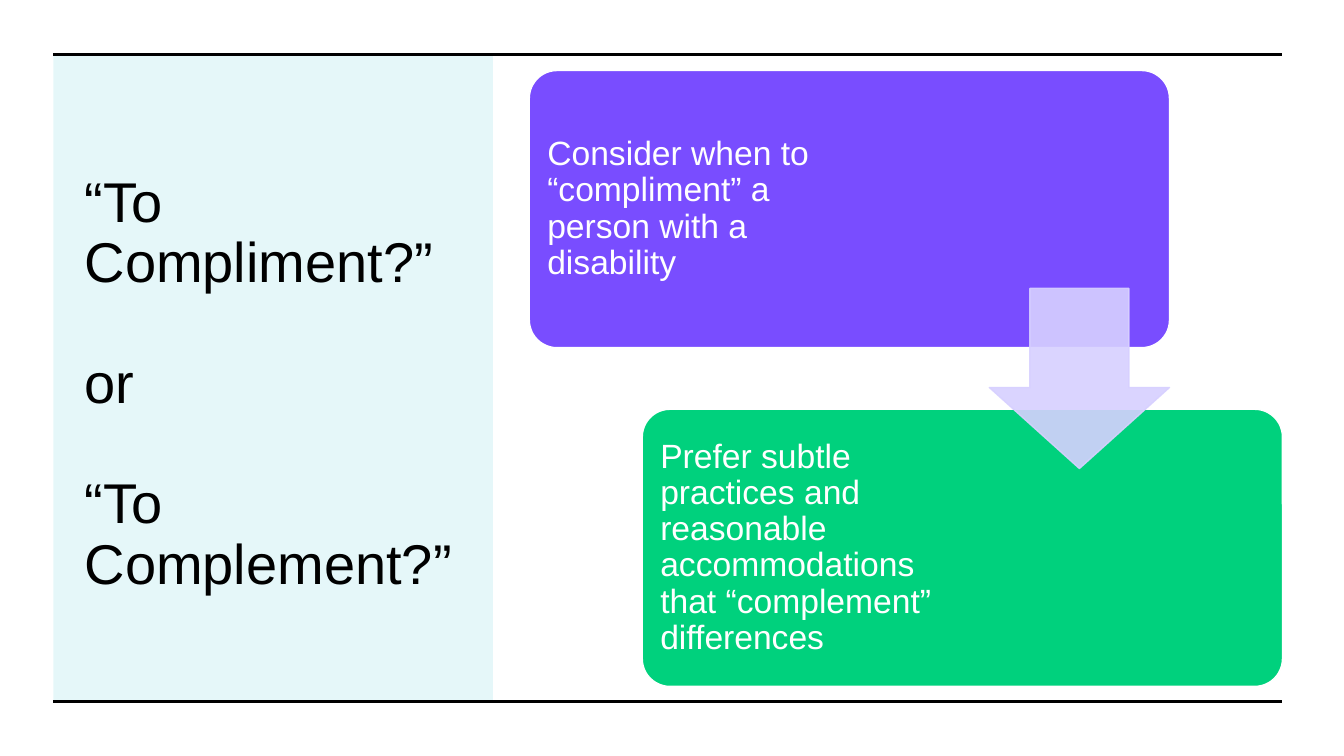
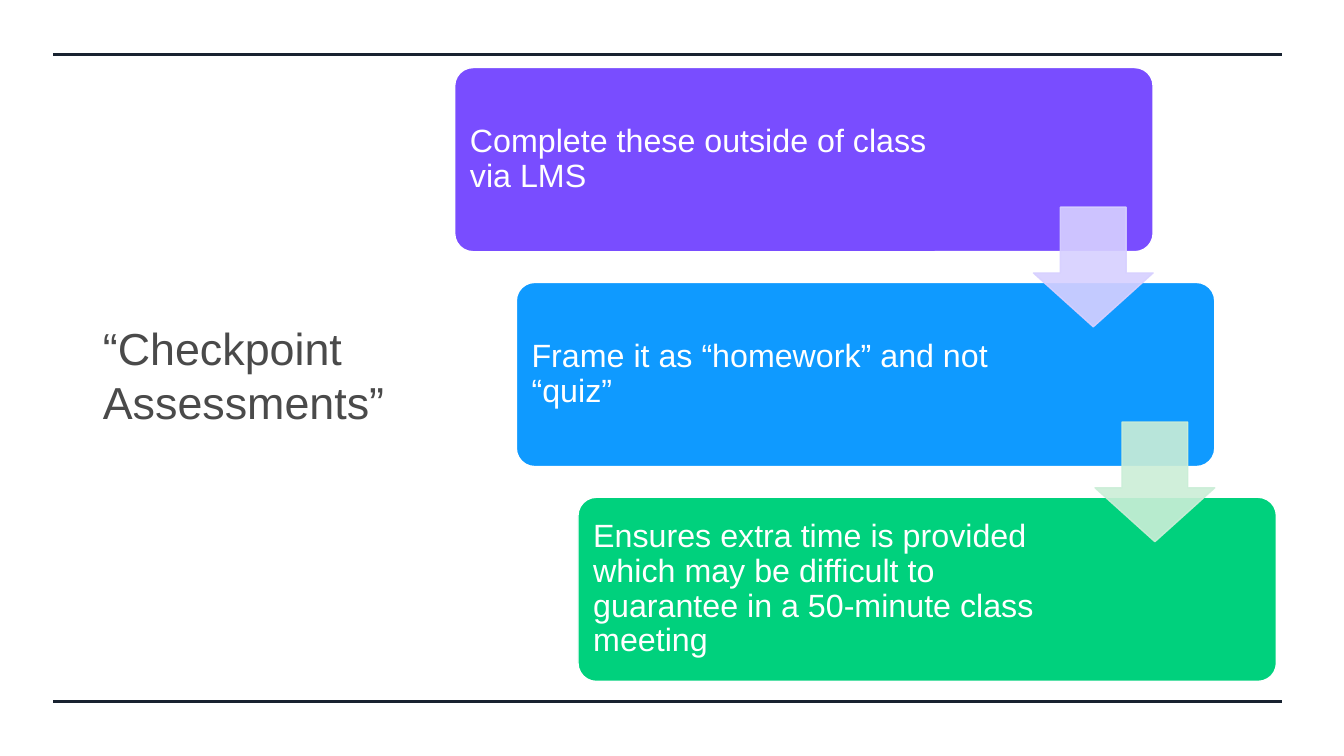
from lxml import etree
from pptx import Presentation, util as u
from pptx.dml.color import RGBColor
from pptx.enum import shapes, text
from pptx.oxml import ns

# Shared style
FONT = "Arial"
WHITE = RGBColor(0xFF, 0xFF, 0xFF)
BLACK = RGBColor(0x00, 0x00, 0x00)
NAVY = RGBColor(0x18, 0x22, 0x30)
GREY = RGBColor(0x4A, 0x4A, 0x4A)
TEAL = RGBColor(0x00, 0xBA, 0xC8)
PURPLE = RGBColor(0x79, 0x4D, 0xFF)
BLUE = RGBColor(0x0F, 0x9A, 0xFF)
GREEN = RGBColor(0x00, 0xD1, 0x7D)
LILAC = RGBColor(0xD7, 0xD0, 0xFF)
MINT = RGBColor(0xCB, 0xEE, 0xD7)

# Page frame, in inches
WIDTH, HEIGHT = 13.33, 7.5
LEFT, RIGHT = 0.53, 12.72
TOP, BOTTOM = 0.54, 6.96

# Cascade proportions, as shares of its area
CARD_WIDTH = 0.85
CARDS_HEIGHT = 0.9
ARROW_SIZE = 0.65  # share of card height


def inches(*lengths):
    return [u.Inches(length) for length in lengths]


def format_text(frame, size, color, spacing):
    frame.word_wrap = True
    frame.auto_size = text.MSO_AUTO_SIZE.NONE
    frame.vertical_anchor = text.MSO_ANCHOR.MIDDLE
    for para in frame.paragraphs:
        para.alignment = text.PP_ALIGN.LEFT
        para.line_spacing = spacing
        for span in para.runs:
            span.font.name = FONT
            span.font.size = u.Pt(size)
            span.font.color.rgb = color


def set_opacity(shape, percent):
    for color in shape.element.spPr.iter(ns.qn("a:srgbClr")):
        etree.SubElement(color, ns.qn("a:alpha"), val=str(percent * 1000))


def add_block(page, kind, at, fill, line=None):
    block = page.shapes.add_shape(kind, *inches(*at))
    block.shadow.inherit = False
    block.fill.solid()
    block.fill.fore_color.rgb = fill
    if line is None:
        block.line.fill.background()
    else:
        block.line.color.rgb = line
        block.line.width = u.Pt(1)
    return block


def add_rules(page, color):
    for y in (TOP, BOTTOM):
        rule = page.shapes.add_connector(
            shapes.MSO_CONNECTOR.STRAIGHT, *inches(LEFT, y, RIGHT, y))
        rule.line.color.rgb = color
        rule.line.width = u.Pt(2.25)
        etree.SubElement(rule.element.spPr, ns.qn("a:effectLst"))


def set_title(page, at, wording, size, color, spacing=1.0, gap=0):
    title = page.shapes.title
    title.left, title.top, title.width, title.height = inches(*at)
    title.text_frame.text = wording
    format_text(title.text_frame, size, color, spacing)
    for para in title.text_frame.paragraphs[1:]:
        para.space_before = u.Pt(gap)


def add_panel(page):
    """Tinted panel behind the title."""
    panel = add_block(page, shapes.MSO_SHAPE.RECTANGLE,
                      (LEFT, TOP, 4.36, BOTTOM - TOP), TEAL)
    set_opacity(panel, 10)
    page.shapes.title.element.addprevious(panel.element)


def add_card(page, at, wording, fill, size, text_share):
    card = add_block(page, shapes.MSO_SHAPE.ROUNDED_RECTANGLE, at, fill, WHITE)
    card.adjustments[0] = 0.1
    frame = card.text_frame
    frame.text = wording
    format_text(frame, size, WHITE, 0.9)
    frame.margin_left = frame.margin_top = frame.margin_bottom = u.Inches(0.1)
    frame.margin_right = u.Inches(at[2] * (1 - text_share))


def add_arrow(page, at, fill):
    arrow = add_block(page, shapes.MSO_SHAPE.DOWN_ARROW, at, fill, fill)
    arrow.adjustments[0] = 0.55
    arrow.adjustments[1] = 0.45
    set_opacity(arrow, 90)


def add_cascade(page, area, cards, arrow_fills, size, text_share):
    """Cards stepping down to the right, an arrow across each gap."""
    left, top, width, height = area
    card_width = width * CARD_WIDTH
    card_height = height * CARDS_HEIGHT / len(cards)
    step_x = (width - card_width) / (len(cards) - 1)
    step_y = (height - card_height) / (len(cards) - 1)
    for index, (wording, fill) in enumerate(cards):
        at = (left + index * step_x, top + index * step_y,
              card_width, card_height)
        add_card(page, at, wording, fill, size, text_share)

    arrow_size = card_height * ARROW_SIZE
    for index, fill in enumerate(arrow_fills):
        arrow_left = left + index * step_x + card_width - arrow_size
        gap_middle = top + index * step_y + (card_height + step_y) / 2
        add_arrow(page, (arrow_left, gap_middle - arrow_size / 2,
                         arrow_size, arrow_size), fill)


def add_compliment_page(deck):
    page = deck.slides.add_slide(deck.slide_layouts[5])
    add_panel(page)
    set_title(page, (0.74, 1.07, 3.89, 5.5),
              "“To Compliment?”\nor\n“To Complement?”", 40, BLACK, 0.9, gap=43)
    add_rules(page, BLACK)
    cards = [
        ("Consider when to “compliment” a person with a disability", PURPLE),
        ("Prefer subtle practices and reasonable accommodations that "
         "“complement” differences", GREEN),
    ]
    add_cascade(page, (5.25, 0.7, 7.47, 6.11), cards, [LILAC], 24, 0.53)


def add_checkpoint_page(deck):
    page = deck.slides.add_slide(deck.slide_layouts[5])
    add_rules(page, NAVY)
    set_title(page, (0.92, 0.67, 3.23, 6.09),
              "“Checkpoint Assessments”", 32, GREY)
    cards = [
        ("Complete these outside of class via LMS", PURPLE),
        ("Frame it as “homework” and not “quiz”", BLUE),
        ("Ensures extra time is provided which may be difficult to "
         "guarantee in a 50-minute class meeting", GREEN),
    ]
    add_cascade(page, (4.51, 0.67, 8.15, 6.09), cards, [LILAC, MINT], 23, 0.72)


def main():
    deck = Presentation()
    deck.slide_width, deck.slide_height = inches(WIDTH, HEIGHT)
    add_compliment_page(deck)
    add_checkpoint_page(deck)
    deck.save("out.pptx")


if __name__ == "__main__":
    main()
